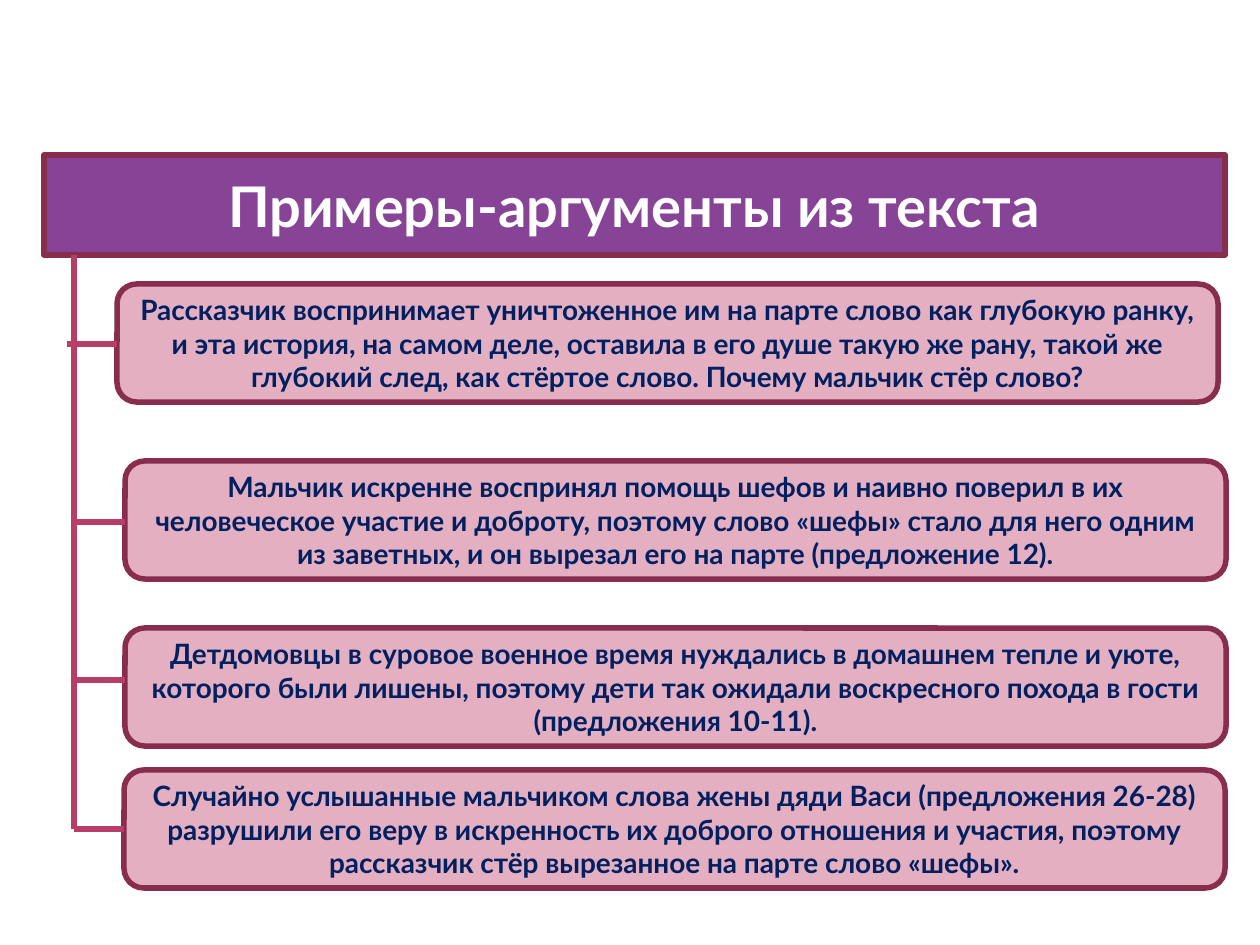
from dataclasses import dataclass

from lxml import etree
from pptx import Presentation
from pptx.dml.color import RGBColor
from pptx.enum.shapes import MSO_CONNECTOR, MSO_SHAPE
from pptx.enum.text import MSO_ANCHOR, MSO_AUTO_SIZE, PP_ALIGN
from pptx.oxml.ns import qn
from pptx.util import Emu, Pt

ROUNDED = MSO_SHAPE.ROUNDED_RECTANGLE
STRAIGHT = MSO_CONNECTOR.STRAIGHT
MIDDLE = MSO_ANCHOR.MIDDLE
CENTER = PP_ALIGN.CENTER
NO_AUTOFIT = MSO_AUTO_SIZE.NONE
TITLE_ONLY = 5
PX_PER_INCH = 126


@dataclass(frozen=True)
class Theme:
    font: str = "Lato"
    title_size: float = 32
    card_size: float = 16
    border_width: float = 3.15
    branch_width: float = 3
    title_fill: str = "874396"
    title_text: str = "FFFFFF"
    card_fill: str = "E5AFC2"
    card_text: str = "002060"
    border: str = "882D4D"
    branch: str = "B83D68"


def px(length):
    return Emu(round(length * 914400 / PX_PER_INCH))


class SlideBuilder:
    def __init__(self, slide, theme):
        self.slide = slide
        self.theme = theme

    def decorate(self, shape, text, fill, color, size):
        shape.shadow.inherit = False
        shape.fill.solid()
        shape.fill.fore_color.rgb = RGBColor.from_string(fill)
        shape.line.color.rgb = RGBColor.from_string(self.theme.border)
        shape.line.width = Pt(self.theme.border_width)
        text_frame = shape.text_frame
        text_frame.text = text
        text_frame.word_wrap = True
        text_frame.auto_size = NO_AUTOFIT
        text_frame.vertical_anchor = MIDDLE
        paragraph = text_frame.paragraphs[0]
        paragraph.alignment = CENTER
        font = paragraph.runs[0].font
        font.name = self.theme.font
        font.size = Pt(size)
        font.bold = True
        font.color.rgb = RGBColor.from_string(color)

    def title(self, text, left, top, width, height):
        shape = self.slide.shapes.title
        shape.left, shape.top = px(left), px(top)
        shape.width, shape.height = px(width), px(height)
        properties = shape.element.spPr
        geometry = etree.SubElement(properties, qn("a:prstGeom"), prst="roundRect")
        etree.SubElement(geometry, qn("a:avLst"))
        theme = self.theme
        self.decorate(shape, text, theme.title_fill, theme.title_text, theme.title_size)

    def card(self, text, left, top, width, height):
        shape = self.slide.shapes.add_shape(
            ROUNDED, px(left), px(top), px(width), px(height))
        theme = self.theme
        self.decorate(shape, text, theme.card_fill, theme.card_text, theme.card_size)

    def branch(self, x1, y1, x2, y2):
        connector = self.slide.shapes.add_connector(
            STRAIGHT, px(x1), px(y1), px(x2), px(y2))
        connector.line.color.rgb = RGBColor.from_string(self.theme.branch)
        connector.line.width = Pt(self.theme.branch_width)
        etree.SubElement(connector.element.spPr, qn("a:effectLst"))


CARD_WIDTH, CARD_HEIGHT = 1101, 118
TRUNK_X, TRUNK_TOP = 74, 255

CARDS = [
    (117, 284, TRUNK_X - 7, 344,
     "Рассказчик воспринимает уничтоженное им на парте слово как глубокую ранку, "
     "и эта история, на самом деле, оставила в его душе такую же рану, такой же "
     "глубокий след, как стёртое слово. Почему мальчик стёр слово?"),
    (125, 461, TRUNK_X, 522,
     "Мальчик искренне воспринял помощь шефов и наивно поверил в их "
     "человеческое участие и доброту, поэтому слово «шефы» стало для него одним "
     "из заветных, и он вырезал его на парте (предложение 12)."),
    (125, 628, TRUNK_X, 680,
     "Детдомовцы в суровое военное время нуждались в домашнем тепле и уюте, "
     "которого были лишены, поэтому дети так ожидали воскресного похода в гости "
     "(предложения 10-11)."),
    (124, 770, TRUNK_X, 829,
     "Случайно услышанные мальчиком слова жены дяди Васи (предложения 26-28) "
     "разрушили его веру в искренность их доброго отношения и участия, поэтому "
     "рассказчик стёр вырезанное на парте слово «шефы»."),
]


def main():
    presentation = Presentation()
    presentation.slide_width = px(1260)
    presentation.slide_height = px(945)
    slide = presentation.slides.add_slide(presentation.slide_layouts[TITLE_ONLY])
    builder = SlideBuilder(slide, Theme())

    builder.title("Примеры-аргументы из текста", 44, 155, 1181, 100)
    for left, top, _, _, text in CARDS:
        builder.card(text, left, top, CARD_WIDTH, CARD_HEIGHT)

    trunk_bottom = CARDS[-1][3]
    builder.branch(TRUNK_X, TRUNK_TOP, TRUNK_X, trunk_bottom)
    for left, _, branch_start, branch_y, _ in CARDS:
        builder.branch(branch_start, branch_y, left, branch_y)

    presentation.save("out.pptx")


if __name__ == "__main__":
    main()
